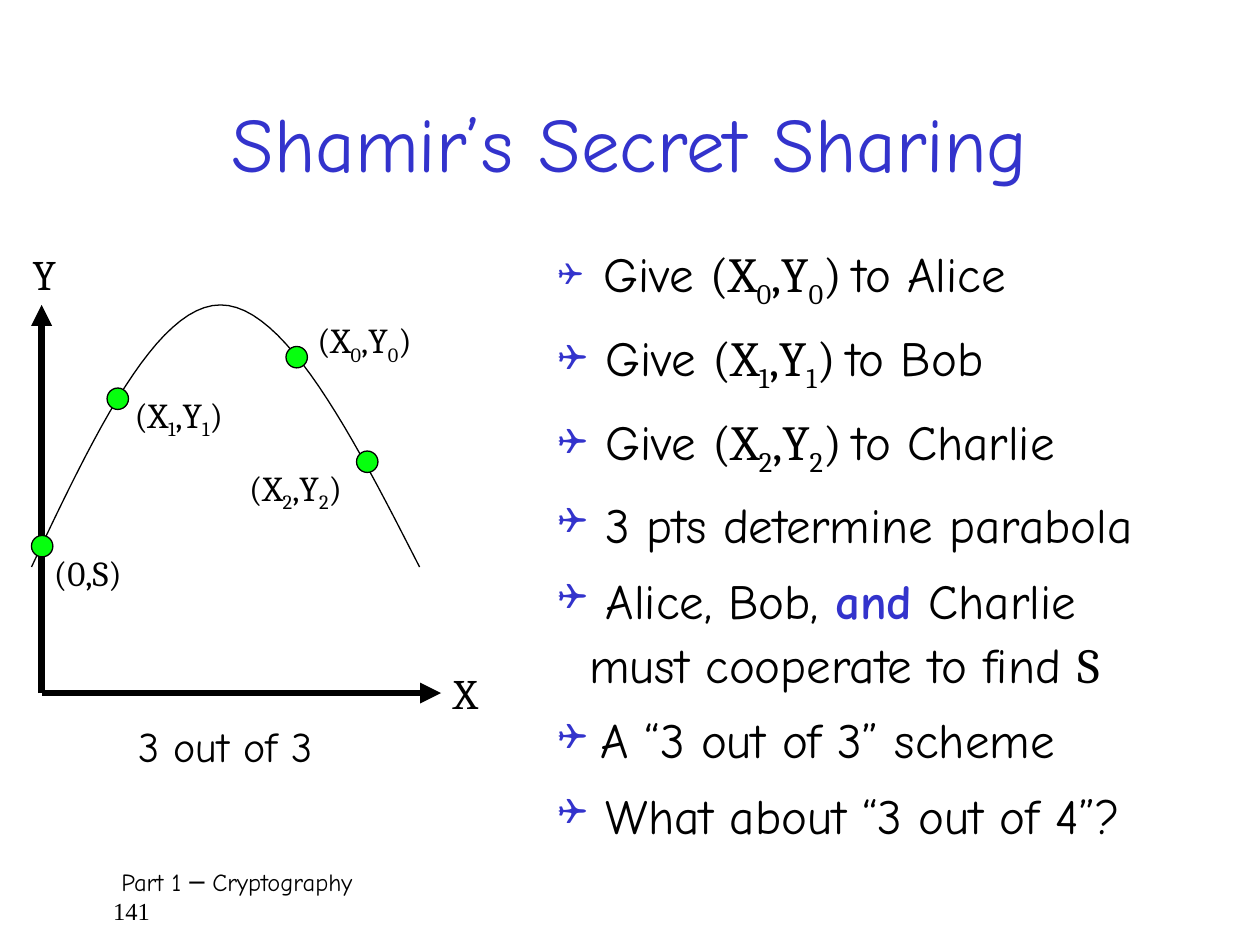
"""Build a slide that explains three-out-of-three secret sharing."""
from dataclasses import dataclass

from lxml import etree
from pptx import Presentation
from pptx import util as u
from pptx.dml.color import RGBColor
from pptx.enum import shapes, text
from pptx.oxml.ns import qn


@dataclass(frozen=True)
class Theme:
    ink: str = "000000"
    accent: str = "3333CC"
    dot: str = "06FF0E"
    sans: str = "Comic Neue"
    serif: str = "Cambria"
    number: str = "Times New Roman"
    title: int = 44
    body: int = 28
    caption: int = 24
    label: int = 20
    footer: int = 14
    axis: float = 4
    thin: float = 0.75


T = Theme()


def run(p, content, font=T.sans, size=T.body, color=T.ink, bold=False, sub=False):
    r = p.add_run()
    r.text = content
    r.font.name, r.font.size, r.font.bold = font, u.Pt(size), bold
    r.font.color.rgb = RGBColor.from_string(color)
    if sub:
        r.font._element.set("baseline", "-25000")


def share(p, n, size):
    for content, sub in (("(X", False), (n, True), (",Y", False), (n, True), (")", False)):
        run(p, content, font=T.serif, size=size, sub=sub)


def bezier(a, b, c, d, steps=24):
    for i in range(1, steps + 1):
        t = i / steps
        weights = ((1 - t) ** 3, 3 * t * (1 - t) ** 2, 3 * t * t * (1 - t), t ** 3)
        yield tuple(sum(w * q[k] for w, q in zip(weights, (a, b, c, d))) for k in (0, 1))


class Deck:
    def __init__(self, prs, theme):
        self.theme = theme
        self.s = prs.slides.add_slide(prs.slide_layouts[6])

    def box(self, x, y, w, h, wrap=True, grow=False):
        sp = self.s.shapes.add_textbox(*map(u.Inches, (x, y, w, h)))
        tf = sp.text_frame
        tf.word_wrap = wrap
        if grow:
            tf.auto_size = text.MSO_AUTO_SIZE.SHAPE_TO_FIT_TEXT
        return tf

    def label(self, x, y, w, h, content, **fmt):
        run(self.box(x, y, w, h, wrap=False, grow=True).paragraphs[0], content, **fmt)

    def share_label(self, x, y, n):
        tf = self.box(x, y, 1.03, 0.43, wrap=False, grow=True)
        share(tf.paragraphs[0], n, self.theme.label)

    def title(self, content):
        tf = self.box(0.75, 0.5, 8.5, 1.25)
        tf.vertical_anchor = text.MSO_ANCHOR.MIDDLE
        p = tf.paragraphs[0]
        p.alignment = text.PP_ALIGN.CENTER
        run(p, content, size=self.theme.title, color=self.theme.accent)

    def footer(self, content, number):
        tf = self.box(0.8, 6.83, 8.53, 0.5)
        run(tf.paragraphs[0], content, size=self.theme.footer)
        run(tf.add_paragraph(), number, font=self.theme.number, size=self.theme.footer)

    def outline(self, sp, width):
        sp.line.color.rgb = RGBColor.from_string(self.theme.ink)
        sp.line.width = u.Pt(width)

    def arrow(self, x1, y1, x2, y2):
        c = self.s.shapes.add_connector(
            shapes.MSO_CONNECTOR.STRAIGHT, *map(u.Inches, (x1, y1, x2, y2)))
        self.outline(c, self.theme.axis)
        etree.SubElement(c.line._get_or_add_ln(), qn("a:tailEnd"), type="triangle")
        etree.SubElement(c._element.spPr, qn("a:effectLst"))

    def curve(self, start, *segments):
        points, at = [], start
        for segment in segments:
            points += bezier(at, *segment)
            at = segment[-1]
        fb = self.s.shapes.build_freeform(
            u.Inches(start[0]), u.Inches(start[1]))
        fb.add_line_segments([tuple(map(u.Inches, q)) for q in points], close=False)
        sp = fb.convert_to_shape()
        sp.fill.background()
        sp.shadow.inherit = False
        self.outline(sp, self.theme.thin)

    def dot(self, x, y, d=0.17):
        sp = self.s.shapes.add_shape(shapes.MSO_SHAPE.OVAL, *map(u.Inches, (x, y, d, d)))
        sp.fill.solid()
        sp.fill.fore_color.rgb = RGBColor.from_string(self.theme.dot)
        sp.shadow.inherit = False
        self.outline(sp, self.theme.thin)

    def bullet(self, tf, first=False):
        p = tf.paragraphs[0] if first else tf.add_paragraph()
        p.line_spacing, p.space_after = 1.1, u.Pt(6)
        pPr = p._p.get_or_add_pPr()
        pPr.set("marL", str(u.Inches(0.25)))
        pPr.set("indent", str(u.Inches(-0.25)))
        color = etree.SubElement(pPr, qn("a:buClr"))
        etree.SubElement(color, qn("a:srgbClr"), val=self.theme.accent)
        etree.SubElement(pPr, qn("a:buSzPct"), val="75000")
        etree.SubElement(pPr, qn("a:buFont"), typeface="Wingdings")
        etree.SubElement(pPr, qn("a:buChar"), char="❑")
        return p


def main():
    prs = Presentation()
    prs.slide_width, prs.slide_height = u.Inches(10), u.Inches(7.5)
    deck = Deck(prs, T)
    deck.footer(" Part 1 ─ Cryptography", "141")
    deck.title("Shamir’s Secret Sharing")

    deck.arrow(0.33, 5.5, 3.5, 5.5)
    deck.arrow(0.33, 5.5, 0.33, 2.42)
    deck.label(3.5, 5.25, 0.42, 0.5, "X", font=T.serif, size=T.caption)
    deck.label(0.16, 1.92, 0.42, 0.5, "Y", font=T.serif, size=T.caption)
    deck.curve((0.25, 4.5),
               ((0.74, 3.46), (1.24, 2.42), (1.75, 2.42)),
               ((2.26, 2.42), (2.8, 3.46), (3.33, 4.5)))
    for x, y in ((0.25, 4.25), (0.85, 3.08), (2.27, 2.75), (2.83, 3.58)):
        deck.dot(x, y)
    for n, (x, y) in enumerate(((2.42, 2.48), (0.97, 3.07), (1.88, 3.65))):
        deck.share_label(x, y, str(n))
    deck.label(0.33, 4.33, 0.8, 0.43, "(0,S)", font=T.serif, size=T.label)
    deck.label(1, 5.67, 1.76, 0.57, "3 out of 3", size=T.caption)

    tf = deck.box(4.33, 1.83, 5.17, 4.74, grow=True)
    for n, name in enumerate(("Alice", "Bob", "Charlie")):
        p = deck.bullet(tf, first=n == 0)
        run(p, " ", size=T.body if n else T.caption)
        run(p, "Give ")
        share(p, str(n), T.body)
        run(p, " ", font=T.serif)
        run(p, f"to {name}")
    run(deck.bullet(tf), " 3 pts determine parabola")
    p = deck.bullet(tf)
    run(p, " Alice, Bob, ")
    run(p, "and", color=T.accent, bold=True)
    run(p, " Charlie must cooperate to find ")
    run(p, "S", font=T.serif)
    p = deck.bullet(tf)
    run(p, " ", font=T.serif)
    run(p, "A “3 out of 3” scheme")
    run(deck.bullet(tf), " What about “3 out of 4”?")
    prs.save("out.pptx")


if __name__ == "__main__":
    main()
